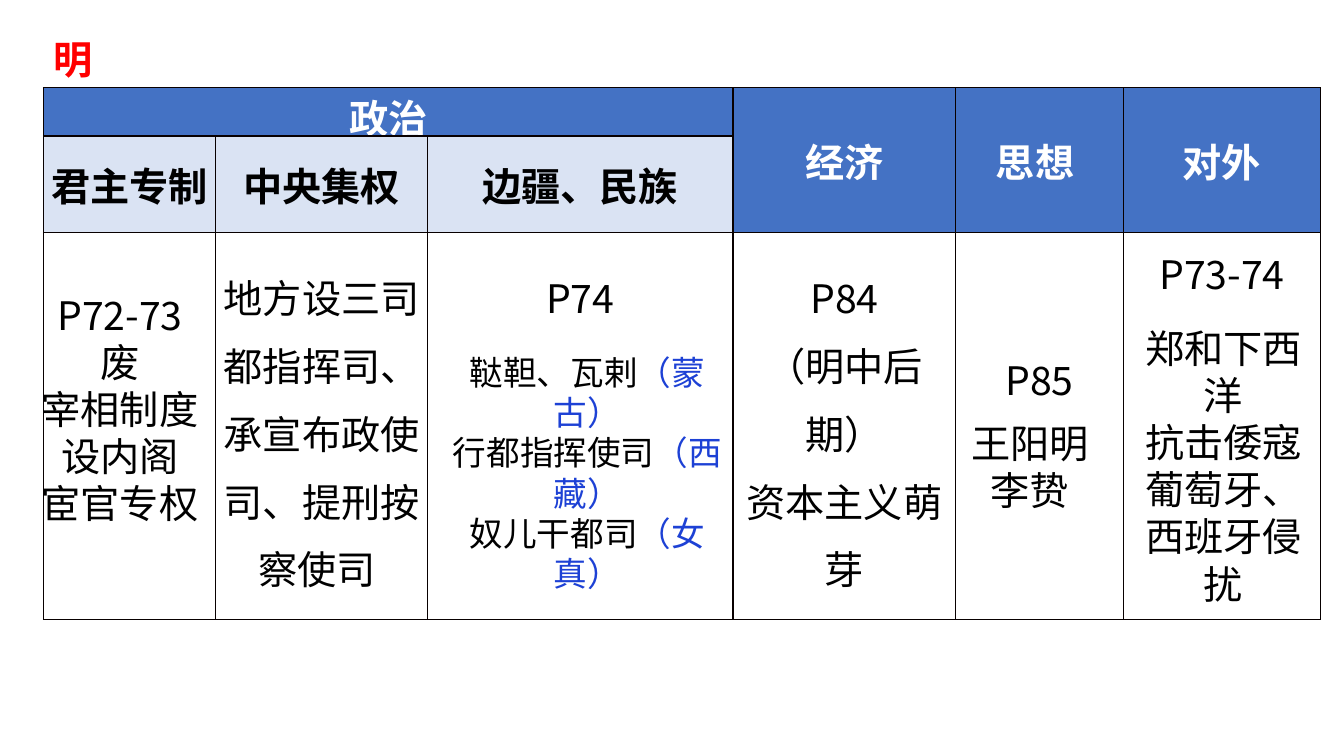
from lxml.etree import SubElement
from pptx import Presentation
from pptx.dml.color import RGBColor
from pptx.enum.text import MSO_ANCHOR, PP_ALIGN
from pptx.oxml.ns import qn
from pptx.util import Inches, Pt

SANS = "Noto Sans CJK SC"
BLACK, WHITE, RED, BLUE = "000000", "FFFFFF", "FF0000", "1D41D5"
HEADER_FILL, SUBHEADER_FILL, BORDER = "4472C4", "DAE3F3", "080000"

COLUMN_WIDTHS = [1.71, 2.1, 3.03, 2.21, 1.66, 1.96]
ROW_HEIGHTS = [0.48, 0.96, 3.84]
MERGES = [((0, 0), (0, 2))] + [((0, column), (1, column)) for column in (3, 4, 5)]
HEADERS = {0: "政治", 3: "经济", 4: "思想 ", 5: "对外"}
SUBHEADERS = ["君主专制", "中央集权", "边疆、民族"]
BODY = {
    1: (["地方设三司", "都指挥司、承宣布政使司、提刑按察使司 "], 0),
    2: (["P74"], 2.68),
    3: (["P84", "（明中后期）", "资本主义萌芽"], 0),
    4: (["P85"], 1.07),
    5: (["P73-74"], 3.21),
}
NOTES = [
    ((0.09, 2.84, 2.2, 2.46), 28, ["P72-73", "废", "宰相制度", "设内阁", "宦官专权"]),
    ((4.35, 3.44, 2.95, 1.72), 24, [
        ("鞑靼、瓦剌", "（蒙古）"),
        ("行都指挥使司", "（西藏）"),
        ("奴儿干都司", "（女真）"),
    ]),
    ((9.13, 4.11, 2.17, 1.04), 28, ["王阳明", "李贽"]),
    ((11.18, 3.17, 1.91, 2.93), 28, ["郑和下西洋", "抗击倭寇葡萄牙、", "西班牙侵扰"]),
]


def color(value):
    """Turn a hex string into a colour."""
    return RGBColor.from_string(value)


class SlideBuilder:
    """Draw styled elements on the current slide."""

    def __init__(self, slide):
        """Keep the slide to draw on."""
        self.slide = slide

    def set_lines(self, frame, lines, size=28, ink=BLACK, bold=False, font=SANS,
                  align=PP_ALIGN.CENTER, spacing=None):
        """Fill a text frame; a pair of strings is a term and its blue gloss."""
        for index, line in enumerate(lines):
            paragraph = frame.paragraphs[0] if index == 0 else frame.add_paragraph()
            paragraph.alignment = align
            paragraph.line_spacing = spacing
            paragraph.font.name = font
            paragraph.font.size = Pt(size)
            paragraph.font.bold = bold
            paragraph.font.color.rgb = color(ink)
            term, gloss = (line, None) if isinstance(line, str) else line
            paragraph.add_run().text = term
            if gloss:
                run = paragraph.add_run()
                run.text = gloss
                run.font.color.rgb = color(BLUE)

    def text(self, box, lines, wrap=True, **style):
        """Add a text box."""
        shape = self.slide.shapes.add_textbox(*map(Inches, box))
        shape.text_frame.word_wrap = wrap
        self.set_lines(shape.text_frame, lines, **style)

    def table(self, left, top, widths, heights):
        """Add a bordered table without a banded style."""
        frame = self.slide.shapes.add_table(
            len(heights), len(widths), Inches(left), Inches(top),
            Inches(sum(widths)), Inches(sum(heights)))
        table = frame.table
        table.first_row = table.horz_banding = False
        for column, width in zip(table.columns, widths):
            column.width = Inches(width)
        for row, height in zip(table.rows, heights):
            row.height = Inches(height)
        for cell in table.iter_cells():
            self.border(cell)
            cell.fill.background()
            cell.vertical_anchor = MSO_ANCHOR.MIDDLE
            cell.margin_left = cell.margin_right = Inches(0.07)
            cell.margin_top = cell.margin_bottom = 0
        return table

    def border(self, cell):
        """Outline a table cell."""
        properties = cell._tc.get_or_add_tcPr()
        for side in ("a:lnL", "a:lnR", "a:lnT", "a:lnB"):
            line = SubElement(properties, qn(side), w=str(Pt(1)))
            fill = SubElement(line, qn("a:solidFill"))
            SubElement(fill, qn("a:srgbClr"), val=BORDER)

    def cell(self, cell, lines, fill=None, bottom=0, **style):
        """Set the text and fill of a table cell."""
        if fill:
            cell.fill.solid()
            cell.fill.fore_color.rgb = color(fill)
        cell.margin_bottom = Inches(bottom)
        self.set_lines(cell.text_frame, lines, **style)


def main():
    """Build the Ming dynasty overview."""
    presentation = Presentation()
    presentation.slide_width = Inches(13.33)
    presentation.slide_height = Inches(7.5)
    builder = SlideBuilder(presentation.slides.add_slide(presentation.slide_layouts[6]))

    builder.text((0.43, 0.3, 0.59, 0.57), ["明"], wrap=False, ink=RED, bold=True,
                 font="Calibri", align=PP_ALIGN.LEFT)
    table = builder.table(0.43, 0.87, COLUMN_WIDTHS, ROW_HEIGHTS)
    for first, last in MERGES:
        table.cell(*first).merge(table.cell(*last))
    for column, title in HEADERS.items():
        builder.cell(table.cell(0, column), [title], HEADER_FILL, ink=WHITE, bold=True)
    for column, title in enumerate(SUBHEADERS):
        builder.cell(table.cell(1, column), [title], SUBHEADER_FILL, bold=True)
    for column, (lines, bottom) in BODY.items():
        builder.cell(table.cell(2, column), lines, bottom=bottom, spacing=1.2)
    for box, size, lines in NOTES:
        builder.text(box, lines, size=size)

    presentation.save("out.pptx")


if __name__ == "__main__":
    main()
